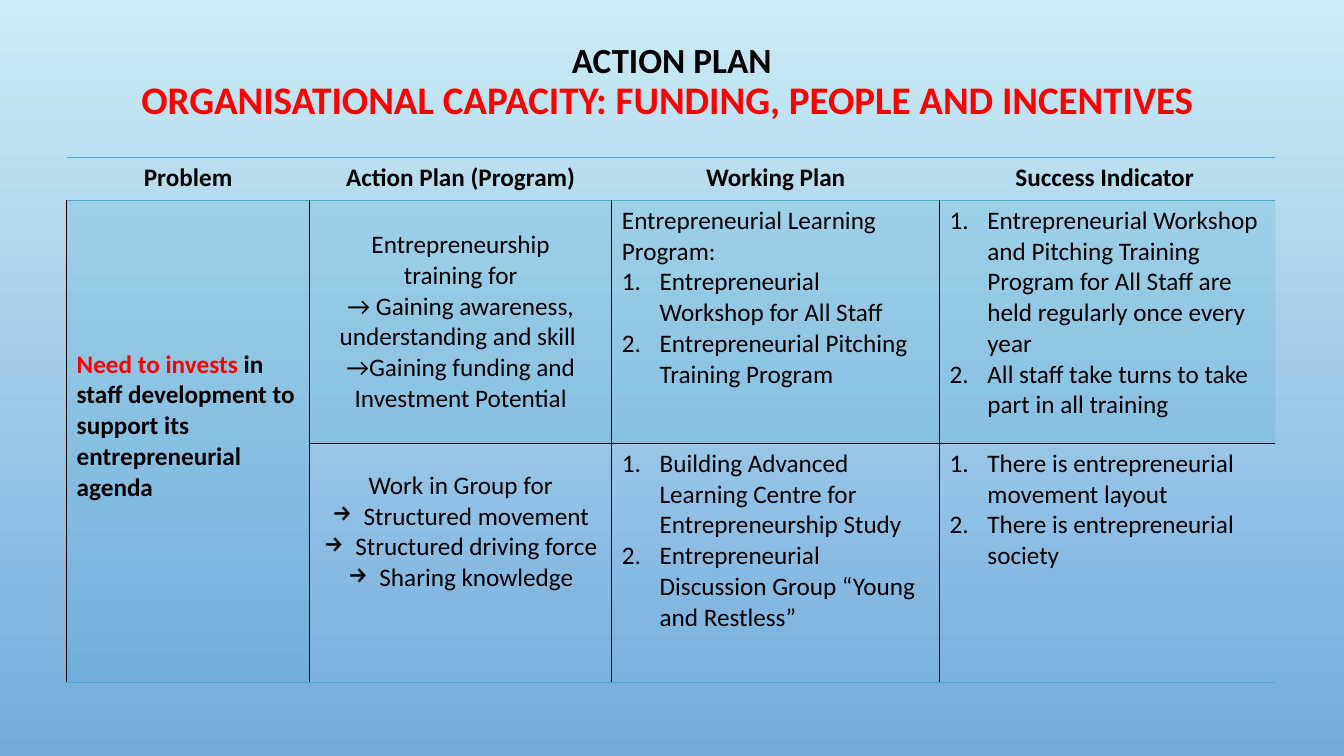
from lxml import etree
from pptx import Presentation
from pptx import util as u
from pptx.dml import color
from pptx.enum import text
from pptx.oxml import ns

HUES = {"sky": "CBECF5", "deep": "73ABDD", "ink": "000000", "red": "FF0000", "teal": "48A8D0"}
COLS = [6.12, 7.62, 8.26, 8.46]
ROWS = [1.09, 6.12, 6.02]
HEADS = ["Problem", "Action Plan (Program)", "Working Plan", "Success Indicator "]
NEED = "Need to invests "
AGENDA = "in staff development to support its entrepreneurial agenda"
PLAIN, NUM, ARROW = "", "1", "→"
PLANS = [
    [
        [(PLAIN, "Entrepreneurship"), (PLAIN, "training for"),
         (PLAIN, "→ Gaining awareness, understanding and skill "),
         (PLAIN, "→Gaining funding and Investment Potential")],
        [(PLAIN, "Entrepreneurial Learning Program:"),
         (NUM, "Entrepreneurial Workshop for All Staff"),
         (NUM, "Entrepreneurial Pitching Training Program")],
        [(NUM, "Entrepreneurial Workshop and Pitching Training Program for All Staff "
               "are held regularly once every year"),
         (NUM, "All staff take turns to take part in all training")],
    ],
    [
        [(PLAIN, "Work in Group for"), (ARROW, "Structured movement"),
         (ARROW, "Structured driving force"), (ARROW, "Sharing knowledge")],
        [(NUM, "Building Advanced Learning Centre for Entrepreneurship Study"),
         (NUM, "Entrepreneurial Discussion Group “Young and Restless”")],
        [(NUM, "There is entrepreneurial movement layout"),
         (NUM, "There is entrepreneurial society")],
    ],
]


def rgb(hue):
    """Return the colour of a named hue."""
    return color.RGBColor.from_string(HUES[hue])


def style(run, size=18, hue="ink", bold=False):
    """Format one run."""
    font = run.font
    font.name, font.size, font.bold = "Calibri", u.Pt(size), bold
    font.color.rgb = rgb(hue)


def mark(para, kind):
    """Give a paragraph a number or an arrow with a hanging indent."""
    props = para._p.get_or_add_pPr()
    dent = u.Cm(0.95 if kind == NUM else 0.79)
    props.set("marL", str(dent))
    props.set("indent", str(-dent))
    if kind == NUM:
        etree.SubElement(props, ns.qn("a:buFont"), typeface="+mj-lt")
        etree.SubElement(props, ns.qn("a:buAutoNum"), type="arabicPeriod")
    else:
        etree.SubElement(props, ns.qn("a:buChar"), char=ARROW)


def write(cell, items, mid=False, bold=False):
    """Fill a cell with marked paragraphs."""
    frame = cell.text_frame
    frame.text = "\n".join(words for _, words in items)
    for para, (kind, _) in zip(frame.paragraphs, items):
        if kind:
            mark(para, kind)
        if mid:
            para.alignment = text.PP_ALIGN.CENTER
        for run in para.runs:
            style(run, bold=bold)


def edge(cell, **sides):
    """Draw the borders named L, R, T and B in the given hues."""
    props = cell._tc.get_or_add_tcPr()
    for side in "LRTB":
        if side in sides:
            line = etree.SubElement(props, ns.qn("a:ln" + side), w=str(u.Pt(1)))
            fill = etree.SubElement(line, ns.qn("a:solidFill"))
            etree.SubElement(fill, ns.qn("a:srgbClr"), val=HUES[sides[side]])


def tint(cell):
    """Fill a cell with sheer teal."""
    cell.fill.solid()
    cell.fill.fore_color.rgb = rgb("teal")
    tone = cell._tc.tcPr.find(".//" + ns.qn("a:solidFill") + "[last()]/" + ns.qn("a:srgbClr"))
    tone = cell._tc.tcPr.find(ns.qn("a:solidFill")).find(ns.qn("a:srgbClr"))
    etree.SubElement(tone, ns.qn("a:alpha"), val="20000")


def add_title(slide):
    """Add the two-line heading."""
    box = slide.shapes.add_textbox(u.Cm(2.54), u.Cm(0.79), u.Cm(28.78), u.Cm(2.59))
    frame = box.text_frame
    frame.word_wrap = True
    frame.vertical_anchor = text.MSO_ANCHOR.MIDDLE
    para = frame.paragraphs[0]
    para.text = "ACTION PLAN\vORGANISATIONAL CAPACITY: FUNDING, PEOPLE AND INCENTIVES "
    para.alignment = text.PP_ALIGN.CENTER
    para.line_spacing = 0.9
    top, main_line = para.runs
    style(top, 25.2, bold=True)
    style(main_line, 27.9, "red", True)


def add_grid(slide):
    """Add the empty table without a banded style."""
    frame = slide.shapes.add_table(len(ROWS), len(COLS), u.Cm(1.68), u.Cm(3.96),
                                   u.Cm(sum(COLS)), u.Cm(sum(ROWS)))
    grid = frame.table
    grid.horz_banding = False
    grid._tbl.tblPr.find(ns.qn("a:tableStyleId")).text = "{2D5ABB26-0587-4C30-8999-92F81FD0307C}"
    for col, wide in zip(grid.columns, COLS):
        col.width = u.Cm(wide)
    for row, high in zip(grid.rows, ROWS):
        row.height = u.Cm(high)
    return grid


def add_need(grid):
    """Write the problem cell that spans both plan rows."""
    cell = grid.cell(1, 0)
    cell.merge(grid.cell(2, 0))
    para = cell.text_frame.paragraphs[0]
    for words, hue in ((NEED, "red"), (AGENDA, "ink")):
        run = para.add_run()
        run.text = words
        style(run, hue=hue, bold=True)
    cell.vertical_anchor = text.MSO_ANCHOR.MIDDLE
    cell.margin_bottom = u.Cm(0.9)
    for part in (cell, grid.cell(2, 0)):
        edge(part, L="ink", R="ink", B="teal")
        tint(part)


def add_plans(grid):
    """Write the header and the two plan rows."""
    for col, head in enumerate(HEADS):
        cell = grid.cell(0, col)
        write(cell, [(PLAIN, head)], mid=True, bold=True)
        edge(cell, T="teal", B="teal")
    for row, plan in enumerate(PLANS, 1):
        for col, items in enumerate(plan, 1):
            cell = grid.cell(row, col)
            write(cell, items, mid=col == 1)
            sides = {"L": "ink", "T": "teal" if row == 1 else "ink",
                     "B": "ink" if row == 1 else "teal"}
            if col < len(plan):
                sides["R"] = "ink"
            edge(cell, **sides)
            if row == 1:
                tint(cell)
            else:
                cell.fill.background()
            if col == 1:
                cell.vertical_anchor = text.MSO_ANCHOR.MIDDLE
    grid.cell(2, 1).margin_bottom = u.Cm(1.68)


def main():
    """Build the slide and save it."""
    deck = Presentation()
    deck.slide_width, deck.slide_height = u.Cm(33.87), u.Cm(19.05)
    slide = deck.slides.add_slide(deck.slide_layouts[6])
    fill = slide.background.fill
    fill.gradient()
    fill.gradient_angle = 270
    for stop, hue in zip(fill.gradient_stops, ("sky", "deep")):
        stop.color.rgb = rgb(hue)
    add_title(slide)
    grid = add_grid(slide)
    add_need(grid)
    add_plans(grid)
    deck.save("out.pptx")


if __name__ == "__main__":
    main()
